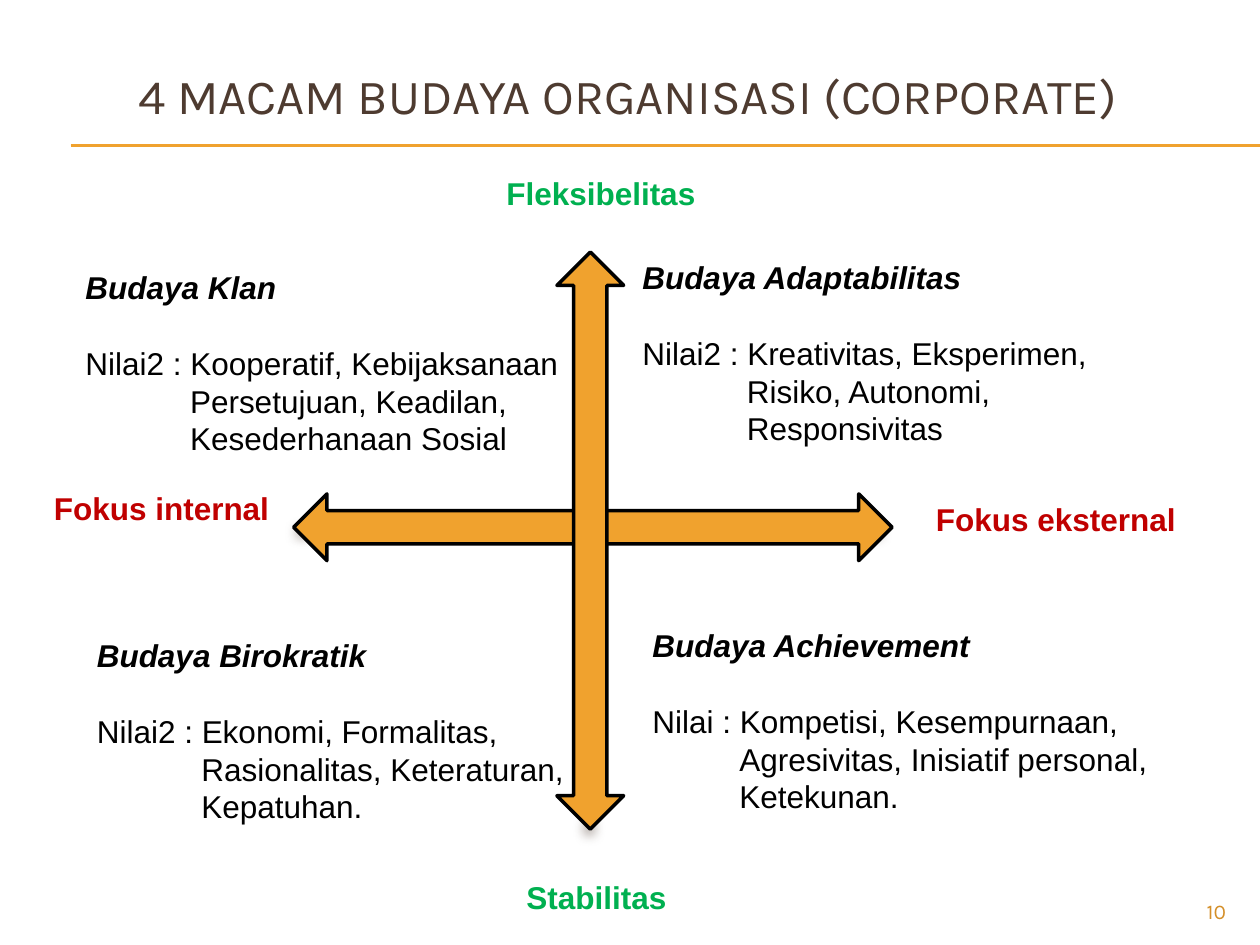
from lxml import etree
from pptx import Presentation
from pptx.dml.color import RGBColor
from pptx.enum.shapes import MSO_CONNECTOR, MSO_SHAPE
from pptx.enum.text import MSO_ANCHOR, PP_ALIGN
from pptx.oxml import parse_xml
from pptx.oxml.ns import nsdecls, qn
from pptx.util import Inches, Pt

STRAIGHT = MSO_CONNECTOR.STRAIGHT
ACROSS, UPDOWN = MSO_SHAPE.LEFT_RIGHT_ARROW, MSO_SHAPE.UP_DOWN_ARROW
MIDDLE = MSO_ANCHOR.MIDDLE
LEFT, RIGHT = PP_ALIGN.LEFT, PP_ALIGN.RIGHT
ORANGE = RGBColor(0xF0, 0xA2, 0x2E)
AMBER = RGBColor(0xD4, 0x8F, 0x29)
BROWN = RGBColor(0x4E, 0x3B, 0x30)
GREEN = RGBColor(0x00, 0xB0, 0x50)
RED = RGBColor(0xC0, 0x00, 0x00)
BLACK = RGBColor(0, 0, 0)
PITCH = Pt(21.6)

prs = Presentation()
prs.slide_width, prs.slide_height = Inches(10), Inches(7.5)
slide = prs.slides.add_slide(prs.slide_layouts[6])
shapes = slide.shapes


def add_text(box, text, size, color, font="Arial", bold=False, align=LEFT):
    frame = shapes.add_textbox(*map(Inches, box)).text_frame
    frame.text = text
    for para in frame.paragraphs:
        para.alignment = align
        face = para.runs[0].font
        face.name, face.size, face.bold = font, Pt(size), bold
        face.color.rgb = color
        if font == "Arial":
            para.line_spacing = PITCH
    return frame


def add_line(start, end, color, width):
    line = shapes.add_connector(STRAIGHT, *map(Inches, start + end))
    line.line.color.rgb = color
    line.line.width = Pt(width)
    effects = etree.SubElement(line._element.spPr, qn("a:effectLst"))
    return line, effects


# Double rule under the title
for y in (1.15, 1.16):
    add_line((0.56, y), (10, y), ORANGE, 0.75)

# Title and page number
title = add_text((1, 0.25, 8.67, 1), "4 MACAM BUDAYA ORGANISASI (CORPORATE)",
                 28, BROWN, "Karla")
title.word_wrap = True
title.vertical_anchor = MIDDLE
add_text((9, 7.08, 0.83, 0.27), "10", 12, AMBER, "Karla", align=RIGHT)

# Axis lines with arrowheads and a soft shadow
for start, end in (((4.67, 2.09), (4.67, 6.58)), ((2.33, 4.17), (7, 4.17))):
    axis, effects = add_line(start, end, BLACK, 2)
    for tag in ("a:headEnd", "a:tailEnd"):
        etree.SubElement(axis.line._get_or_add_ln(), qn(tag), type="arrow")
    effects.append(parse_xml(
        f'<a:outerShdw {nsdecls("a")} blurRad="{Pt(6)}" dist="{Pt(4)}" '
        f'dir="5400000" rotWithShape="0"><a:srgbClr val="{BROWN}">'
        '<a:alpha val="60000"/></a:srgbClr></a:outerShdw>'))

# Axis labels
for box, text, color in (
    ((3.92, 1.33, 1.72, 0.4), "Fleksibelitas", GREEN),
    ((4.08, 6.92, 1.32, 0.4), "Stabilitas", GREEN),
    ((7.33, 3.92, 2.12, 0.4), "Fokus eksternal", RED),
    ((0.33, 3.83, 1.93, 0.4), "Fokus internal", RED),
):
    add_text(box, text, 18, color, bold=True).word_wrap = False

# Four cultures: heading, then values with indented follow-on lines
cultures = (
    ((0.58, 2.08, 3.99, 1.62), 0.83,
     "Budaya Klan\nNilai2 : Kooperatif, Kebijaksanaan\n"
     "Persetujuan, Keadilan,\nKesederhanaan Sosial"),
    ((5, 2, 3.76, 1.62), 0.83,
     "Budaya Adaptabilitas\nNilai2 : Kreativitas, Eksperimen,\n"
     "Risiko, Autonomi,\nResponsivitas"),
    ((0.67, 5, 3.95, 1.62), 0.83,
     "Budaya Birokratik\nNilai2 : Ekonomi, Formalitas,\n"
     "Rasionalitas, Keteraturan,\nKepatuhan."),
    ((5.08, 4.92, 4.16, 1.62), 0.69,
     "Budaya Achievement\nNilai : Kompetisi, Kesempurnaan,\n"
     "Agresivitas, Inisiatif personal,\nKetekunan."),
)
for box, indent, text in cultures:
    frame = add_text(box, text, 18, BLACK)
    frame.word_wrap = False
    head, first, *rest = frame.paragraphs
    head.space_after = PITCH
    head.runs[0].font.bold = head.runs[0].font.italic = True
    for para in rest:
        para._p.get_or_add_pPr().set("marL", str(Inches(indent)))

# Crossed block arrows
for kind, box in ((ACROSS, (2.33, 3.92, 4.75, 0.53)),
                  (UPDOWN, (4.42, 2, 0.53, 4.58))):
    arrow = shapes.add_shape(kind, *map(Inches, box))
    arrow.shadow.inherit = False
    arrow.fill.solid()
    arrow.fill.fore_color.rgb = ORANGE
    arrow.line.color.rgb = BLACK
    arrow.line.width = Pt(2)

prs.save("out.pptx")
